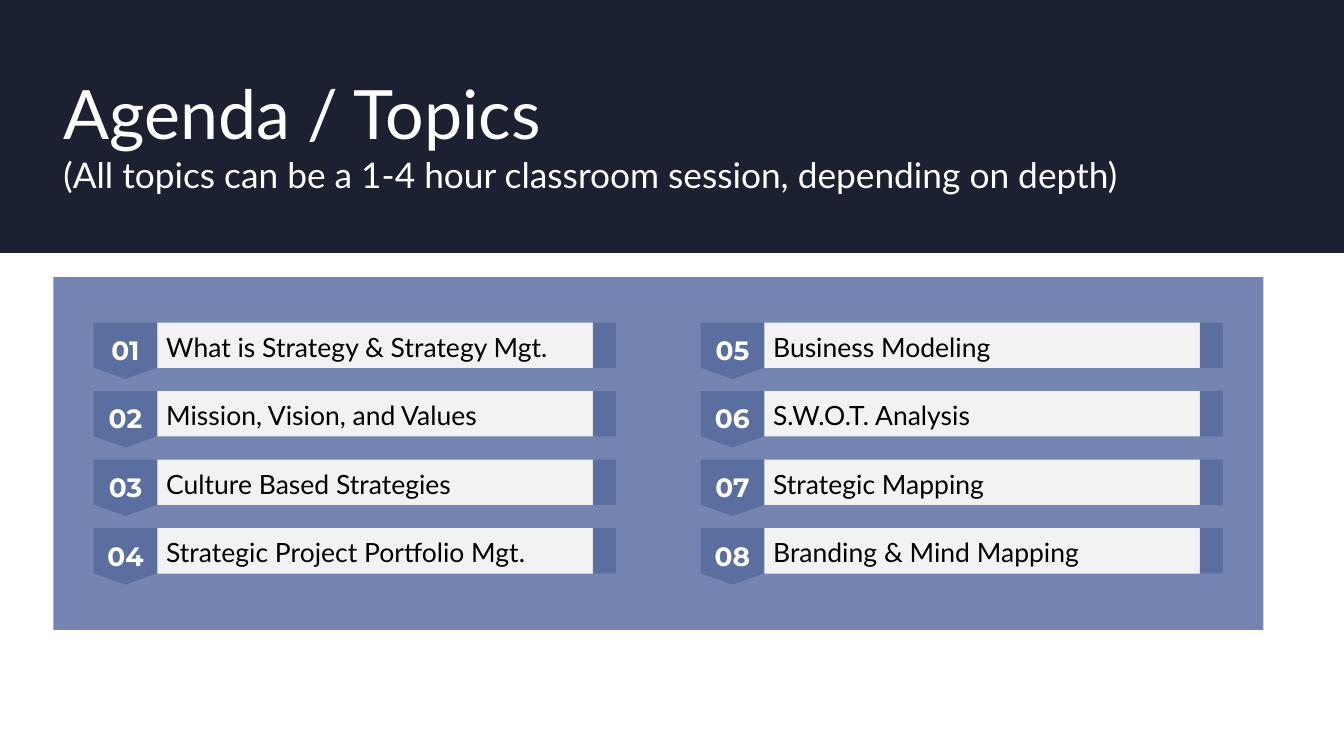
from pptx import Presentation
from pptx.dml.color import RGBColor as Rgb
from pptx.enum.shapes import MSO_SHAPE as Kind
from pptx.enum.text import MSO_ANCHOR as Anchor, PP_ALIGN as Align
from pptx.util import Pt

PX = 9144  # 100 px to the inch
COLORS = {
    "navy": "1B2130",
    "panel": "7485B1",
    "badge": "5A6E9F",
    "bar": "F2F2F2",
    "white": "FFFFFF",
    "black": "000000",
}
TOPICS = [
    "What is Strategy & Strategy Mgt.",
    "Mission, Vision, and Values",
    "Culture Based Strategies",
    "Strategic Project Portfolio Mgt.",
    "Business Modeling",
    "S.W.O.T. Analysis",
    "Strategic Mapping",
    "Branding & Mind Mapping",
]
ROWS = 4


def emu(*box):
    return [n * PX for n in box]


def block(slide, kind, box, color):
    shape = slide.shapes.add_shape(kind, *emu(*box))
    shape.shadow.inherit = False
    shape.fill.solid()
    shape.fill.fore_color.rgb = Rgb.from_string(COLORS[color])
    shape.line.fill.background()


def label(slide, box, text, sizes, face, color, anchor=Anchor.TOP):
    """Add a one-paragraph text box; sizes holds one size per run."""
    frame = slide.shapes.add_textbox(*emu(*box)).text_frame
    frame.word_wrap = True
    frame.vertical_anchor = anchor
    frame.text = text
    para = frame.paragraphs[0]
    for run, size in zip(para.runs, sizes):
        run.font.size = Pt(size)
        run.font.name = face
        run.font.color.rgb = Rgb.from_string(COLORS[color])
    return frame


def header(slide, x, y, w, h):
    block(slide, Kind.RECTANGLE, (x, y, w, h), "navy")
    text = ("Agenda / Topics\v"
            "(All topics can be a 1-4 hour classroom session, depending on depth)")
    label(slide, (x + 53, y + 40, w - 144, h - 66), text, (48.6, 25.2),
          "Lato", "white", Anchor.MIDDLE)


def topic(slide, x, y, w, num, name):
    tab, cap, high = 63, 23, 45
    bar = w - tab - cap
    block(slide, Kind.FLOWCHART_OFFPAGE_CONNECTOR, (x, y, tab, 56), "badge")
    block(slide, Kind.RECTANGLE, (x + tab, y, bar, high), "bar")
    block(slide, Kind.RECTANGLE, (x + w - cap, y, cap, high), "badge")
    frame = label(slide, (x, y + 11, tab, 32), f"{num:02}", (18.9,),
                  "Montserrat", "white", Anchor.MIDDLE)
    frame.margin_left = frame.margin_right = 0
    frame.margin_top = frame.margin_bottom = 0
    para = frame.paragraphs[0]
    para.alignment = Align.CENTER
    para.runs[0].font.bold = True
    label(slide, (x + tab - 1, y + 3, bar + 2, 42), name, (18.9,),
          "Lato", "black")


def agenda(slide, x, y, w, h):
    block(slide, Kind.RECTANGLE, (x, y, w, h), "panel")
    pad, wide, pitch = 40, 518, 68
    step = w - 2 * pad - wide
    for i, name in enumerate(TOPICS):
        col, row = divmod(i, ROWS)
        topic(slide, x + pad + col * step, y + 45 + row * pitch, wide,
              i + 1, name)


def main():
    deck = Presentation()
    deck.slide_width, deck.slide_height = emu(1333, 750)
    slide = deck.slides.add_slide(deck.slide_layouts[6])
    header(slide, 0, 0, 1333, 251)
    agenda(slide, 53, 275, 1200, 350)
    deck.save("out.pptx")


if __name__ == "__main__":
    main()
